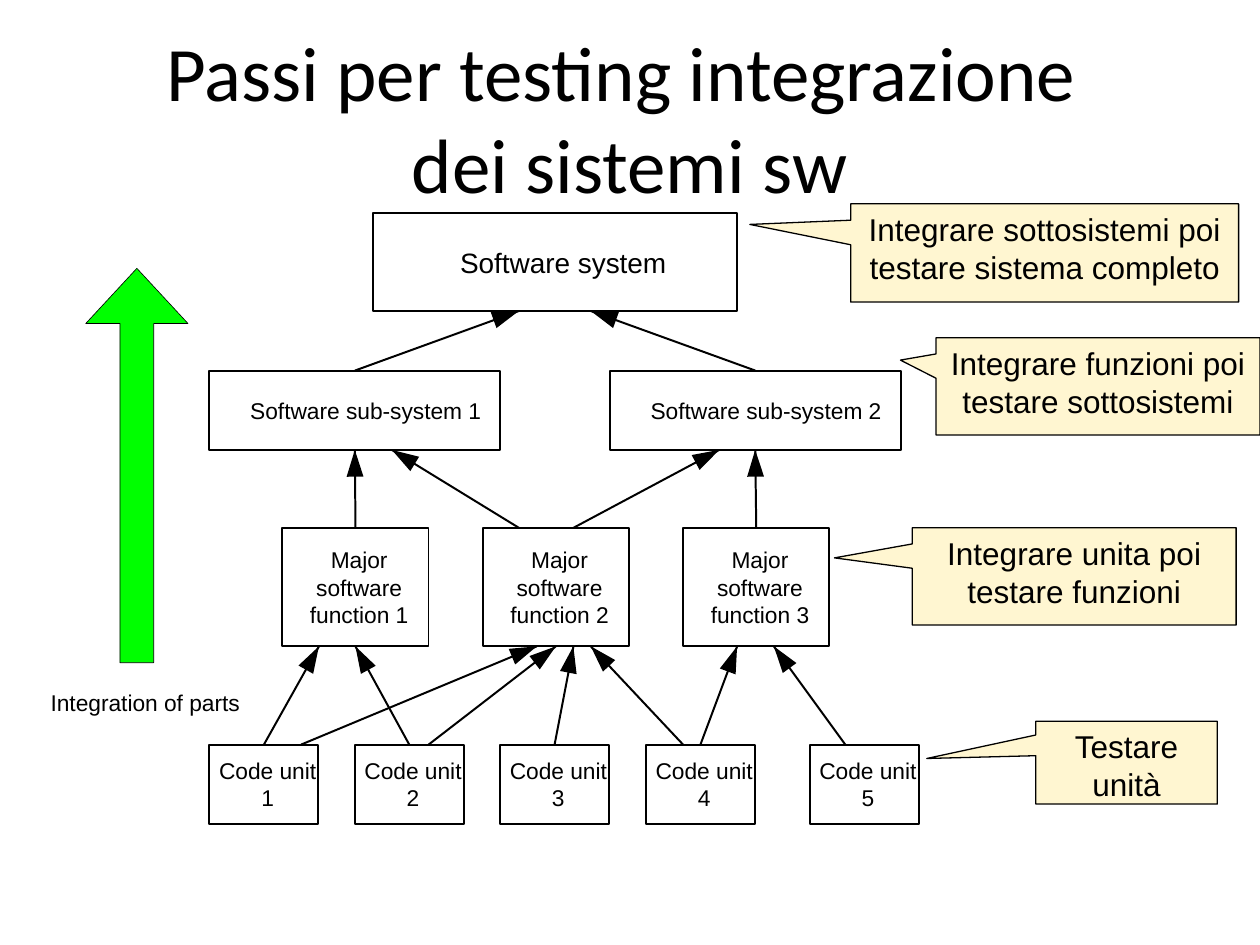
import math

import pptx
import pptx.dml.color
import pptx.enum.shapes
import pptx.enum.text
import pptx.oxml
import pptx.util

Cm = pptx.util.Cm
Pt = pptx.util.Pt
RGBColor = pptx.dml.color.RGBColor
SHAPE = pptx.enum.shapes.MSO_SHAPE
ANCHOR = pptx.enum.text.MSO_ANCHOR
ALIGN = pptx.enum.text.PP_ALIGN

BLACK = RGBColor(0, 0, 0)
WHITE = RGBColor(255, 255, 255)
GREEN = RGBColor(0, 255, 0)
CREAM = RGBColor(0xFF, 0xF6, 0xD1)

# Content; all lengths are in centimetres
TITLE = "Passi per testing integrazione \vdei sistemi sw"
DIRECTION = "Integration of parts"

# Level: top, width, height, text size, left inset, [(key, left, text)]
LEVELS = [
    (4.29, 7.34, 1.98, 16, 0.33, [("system", 7.52, "Software system")]),
    (7.47, 5.87, 1.6, 13, 0.43,
     [(f"sub{n}", 4.22 + 8.07 * (n - 1), f"Software sub-system {n}") for n in (1, 2)]),
    (10.64, 2.95, 2.39, 13, 0.15,
     [(f"function{n}", 5.69 + 4.04 * (n - 1), f"Major\nsoftware\nfunction {n}")
      for n in (1, 2, 3)]),
    (15.01, 2.2, 1.6, 13, 0.15,
     [(f"unit{n}", left, f"Code unit\n{n}")
      for n, left in enumerate((4.22, 7.15, 10.08, 13.02, 16.32), 1)]),
]

# Lower box, x where it leaves, upper box, x of the tip; None is the middle of the side
ARROWS = [
    ("sub1", None, "system", 10.46),
    ("sub2", None, "system", 11.91),
    ("function1", None, "sub1", None),
    ("function2", 10.46, "sub1", 7.9),
    ("function2", 11.56, "sub2", 14.5),
    ("function3", None, "sub2", None),
    ("unit1", None, "function1", 6.43),
    ("unit1", 6.07, "function2", 10.82),
    ("unit2", None, "function1", None),
    ("unit2", 8.64, "function2", None),
    ("unit3", None, "function2", 11.56),
    ("unit4", 13.77, "function2", 11.91),
    ("unit4", None, "function3", 14.86),
    ("unit5", 17.04, "function3", 15.6),
]
HEAD_LENGTH, HEAD_WIDTH = 0.54, 0.34

# Left, top, width, height, pointer, text
CALLOUTS = [
    (20.88, 14.54, 3.66, 1.67, (-1.1, -0.05), "Testare unità"),
    (18.39, 10.64, 6.53, 1.96, (-0.74, -0.19), "Integrare unita poi testare funzioni"),
    (18.87, 6.81, 6.53, 1.96, (-0.61, -0.27), "Integrare funzioni poi testare sottosistemi"),
    (17.15, 4.11, 7.82, 1.98, (-0.76, -0.29),
     "Integrare sottosistemi poi testare sistema completo"),
]


def write(shape, text, size, font="Arial", align=ALIGN.CENTER):
    shape.text_frame.text = text
    for paragraph in shape.text_frame.paragraphs:
        paragraph.alignment = align
        for run in paragraph.runs:
            run.font.size = Pt(size)
            run.font.name = font
            run.font.color.rgb = BLACK


def set_insets(text_frame, left=0):
    text_frame.margin_left = Cm(left)
    text_frame.margin_top = text_frame.margin_right = text_frame.margin_bottom = 0


def add_shape(slide, kind, place, fill, line_width):
    shape = slide.shapes.add_shape(kind, *map(Cm, place))
    shape.shadow.inherit = False
    shape.fill.solid()
    shape.fill.fore_color.rgb = fill
    shape.line.color.rgb = BLACK
    shape.line.width = Pt(line_width)
    return shape


def add_arrow(slide, lower, start_x, upper, tip_x):
    start = (lower.left + lower.width // 2 if start_x is None else Cm(start_x), lower.top)
    tip = (upper.left + upper.width // 2 if tip_x is None else Cm(tip_x),
           upper.top + upper.height)
    line = slide.shapes.add_connector(
        pptx.enum.shapes.MSO_CONNECTOR.STRAIGHT, *start, *tip)
    line.line.color.rgb = BLACK
    line.line.width = Pt(1.13)
    line._element.spPr.append(pptx.oxml.parse_xml(
        '<a:effectLst xmlns:a="http://schemas.openxmlformats.org/drawingml/2006/main"/>'))
    if start_x is None:
        line.begin_connect(lower, 0)
    if tip_x is None:
        line.end_connect(upper, 2)

    # Long solid head, turned along the line
    angle = math.atan2(tip[1] - start[1], tip[0] - start[0])
    along_x, along_y = math.cos(angle), math.sin(angle)
    base_x = tip[0] - Cm(HEAD_LENGTH) * along_x
    base_y = tip[1] - Cm(HEAD_LENGTH) * along_y
    half = Cm(HEAD_WIDTH) / 2
    corners = [(round(base_x - side * half * along_y), round(base_y + side * half * along_x))
               for side in (1, -1)]
    builder = slide.shapes.build_freeform(*tip)
    builder.add_line_segments(corners, close=True)
    head = builder.convert_to_shape()
    head.shadow.inherit = False
    head.fill.solid()
    head.fill.fore_color.rgb = BLACK
    head.line.fill.background()


def main():
    presentation = pptx.Presentation()
    presentation.slide_width = Cm(25.4)
    presentation.slide_height = Cm(19.05)
    slide = presentation.slides.add_slide(presentation.slide_layouts[6])

    # Title
    title = slide.shapes.add_textbox(Cm(1.27), Cm(0.76), Cm(22.86), Cm(3.18))
    title.text_frame.word_wrap = True
    title.text_frame.vertical_anchor = ANCHOR.MIDDLE
    write(title, TITLE, 44, "Calibri")

    # Boxes of the hierarchy
    boxes = {}
    for top, width, height, size, inset, members in LEVELS:
        for key, left, text in members:
            box = add_shape(slide, SHAPE.RECTANGLE, (left, top, width, height), WHITE, 1.13)
            set_insets(box.text_frame, inset)
            box.text_frame.word_wrap = False
            box.text_frame.vertical_anchor = ANCHOR.MIDDLE
            write(box, text, size)
            boxes[key] = box

    # Arrows between the levels
    for lower, start_x, upper, tip_x in ARROWS:
        add_arrow(slide, boxes[lower], start_x, boxes[upper], tip_x)

    # Direction of integration
    direction = add_shape(slide, SHAPE.UP_ARROW, (1.73, 5.41, 2.06, 7.95), GREEN, 0.38)
    direction.adjustments[0] = 0.33
    direction.adjustments[1] = 0.54
    label = slide.shapes.add_textbox(Cm(1.02), Cm(13.89), Cm(3.89), Cm(0.56))
    set_insets(label.text_frame)
    label.text_frame.word_wrap = False
    write(label, DIRECTION, 13, align=ALIGN.LEFT)

    # Callouts
    for *place, pointer, text in CALLOUTS:
        callout = add_shape(slide, SHAPE.RECTANGULAR_CALLOUT, place, CREAM, 0.75)
        callout.adjustments[0], callout.adjustments[1] = pointer
        callout.text_frame.word_wrap = True
        callout.text_frame.vertical_anchor = ANCHOR.TOP
        write(callout, text, 18)

    presentation.save("out.pptx")


if __name__ == "__main__":
    main()
